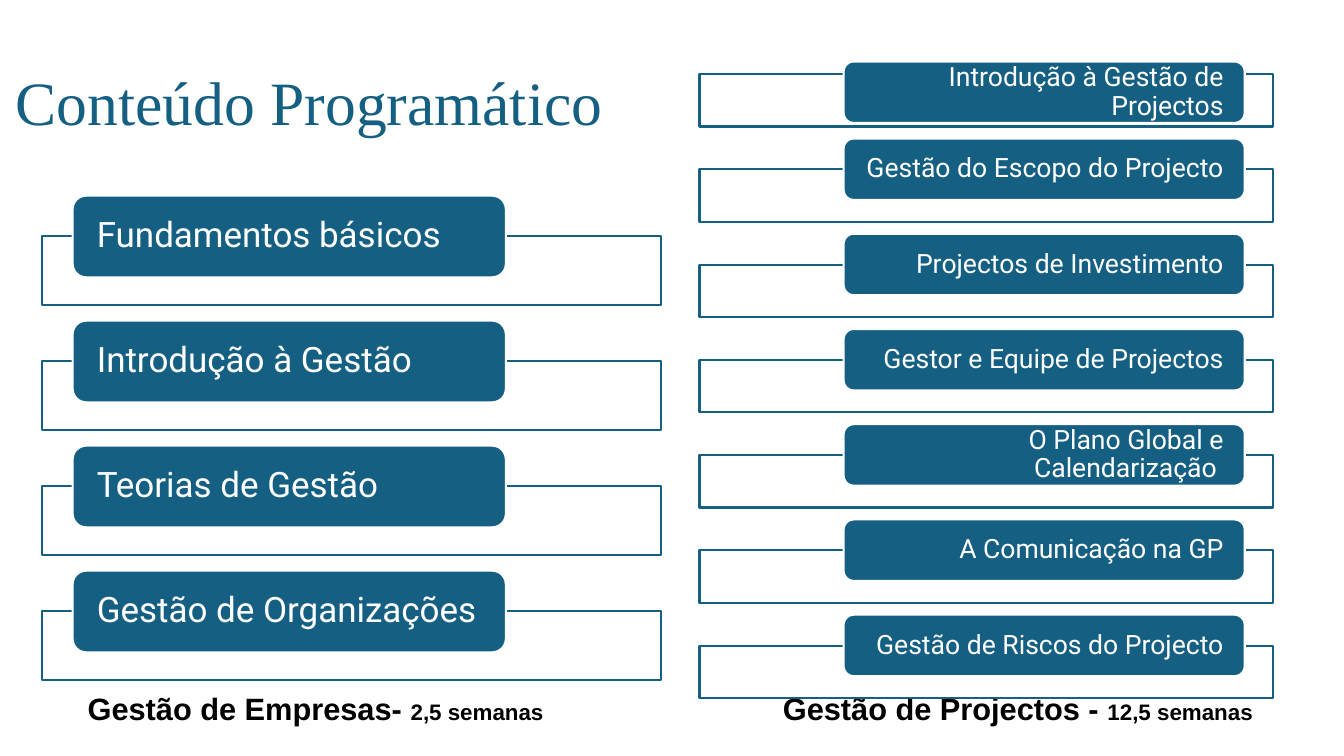
from lxml.etree import SubElement
from pptx import Presentation
from pptx.dml.color import RGBColor
from pptx.enum.shapes import MSO_SHAPE
from pptx.enum.text import MSO_ANCHOR, PP_ALIGN
from pptx.oxml.ns import qn
from pptx.util import Cm, Pt

BLUE = RGBColor(0x15, 0x60, 0x82)
WHITE = RGBColor(0xFF, 0xFF, 0xFF)
BLACK = RGBColor(0, 0, 0)

HEADING = "Conteúdo Programático"
COURSES = [
    {
        "caption": ("Gestão de Empresas- ", "2,5 semanas"),
        "caption_box": (1.96, 17.35, 14.4, 1.27),
        "topics": [
            "Fundamentos básicos",
            "Introdução à Gestão",
            "Teorias de Gestão",
            "Gestão de Organizações",
        ],
        "frame": (1.07, 5.94, 15.6, 1.75),
        "label": (1.83, 4.93, 10.92, 2.06),
        "pitch": 3.15, "first_drop": 0, "inset": 0.51,
        "size": 25, "align": PP_ALIGN.LEFT,
    },
    {
        "caption": ("Gestão de Projectos - ", "12,5 semanas"),
        "caption_box": (19.48, 17.35, 14.4, 1.22),
        "topics": [
            "Introdução à Gestão de Projectos",
            "Gestão do Escopo do Projecto",
            "Projectos de Investimento",
            "Gestor e Equipe de Projectos",
            "O Plano Global e Calendarização ",
            "A Comunicação na GP",
            "Gestão de Riscos do Projecto",
        ],
        "frame": (17.63, 1.87, 14.45, 1.32),
        "label": (21.26, 1.09, 10.11, 1.55),
        "pitch": 2.4, "first_drop": 0.46, "inset": 0.46,
        "size": 19, "align": PP_ALIGN.RIGHT,
    },
]

deck = Presentation()
deck.slide_width, deck.slide_height = Cm(33.87), Cm(19.05)
slide = deck.slides.add_slide(deck.slide_layouts[6])


def write(holder, runs, font, color, bold=False, align=PP_ALIGN.LEFT):
    holder.text_frame.word_wrap = True
    line = holder.text_frame.paragraphs[0]
    line.alignment = align
    line.line_spacing = 0.9
    for words, size in runs:
        run = line.add_run()
        run.text = words
        run.font.name = font
        run.font.size = Pt(size)
        run.font.bold = bold
        run.font.color.rgb = color


def add_panel(preset, box, drop, fill, outline):
    left, top, width, height = box
    panel = slide.shapes.add_shape(
        preset, Cm(left), Cm(top + drop), Cm(width), Cm(height))
    panel.shadow.inherit = False
    panel.fill.solid()
    panel.fill.fore_color.rgb = fill
    panel.line.color.rgb = outline
    panel.line.width = Pt(1.5)
    return panel


heading = slide.shapes.add_textbox(Cm(0.15), Cm(1.12), Cm(16.2), Cm(3.07))
heading.text_frame.vertical_anchor = MSO_ANCHOR.MIDDLE
write(heading, [(HEADING, 44)], "Times New Roman", BLUE)

for course in COURSES:
    caption = slide.shapes.add_textbox(*map(Cm, course["caption_box"]))
    write(caption, zip(course["caption"], (22, 16)), "Arial", BLACK, bold=True)

    for row, topic in enumerate(course["topics"]):
        drop = row * course["pitch"]
        frame = add_panel(MSO_SHAPE.RECTANGLE, course["frame"], drop, WHITE, BLUE)
        tint = frame.fill._xPr.find(qn("a:solidFill"))[0]
        SubElement(tint, qn("a:alpha"), val="90000")

        if row == 0:
            drop += course["first_drop"]
        label = add_panel(
            MSO_SHAPE.ROUNDED_RECTANGLE, course["label"], drop, BLUE, WHITE)
        text = label.text_frame
        text.vertical_anchor = MSO_ANCHOR.MIDDLE
        text.margin_left = text.margin_right = Cm(course["inset"])
        text.margin_top = text.margin_bottom = 0
        write(label, [(topic, course["size"])], "Roboto", WHITE,
              align=course["align"])

deck.save("out.pptx")
